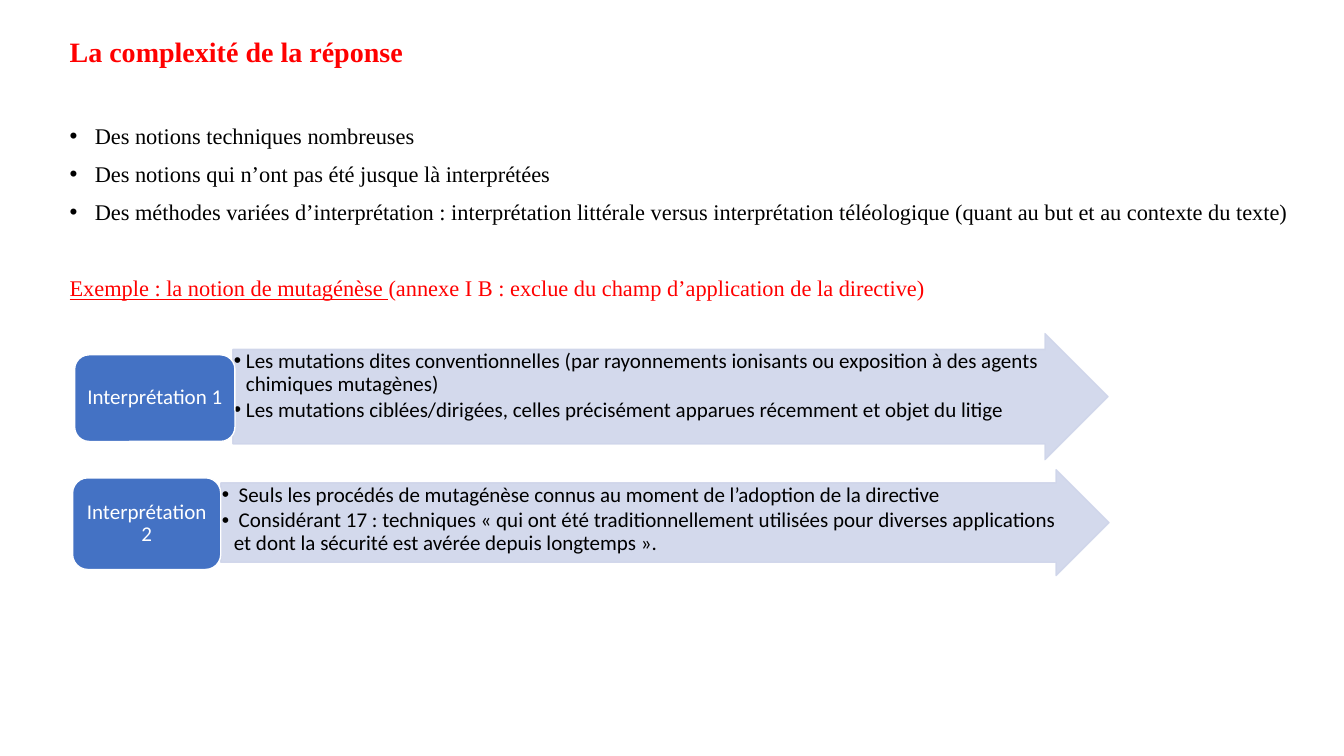
from dataclasses import dataclass

from lxml.etree import SubElement
from pptx import Presentation
from pptx.dml.color import RGBColor
from pptx.enum.shapes import MSO_SHAPE as Preset
from pptx.enum.text import MSO_ANCHOR as Anchor, MSO_AUTO_SIZE as AutoSize, PP_ALIGN as Align
from pptx.oxml.ns import qn
from pptx.util import Inches, Pt


@dataclass(frozen=True)
class Theme:
    red: RGBColor = RGBColor(0xFF, 0x00, 0x00)
    black: RGBColor = RGBColor(0x00, 0x00, 0x00)
    white: RGBColor = RGBColor(0xFF, 0xFF, 0xFF)
    blue: RGBColor = RGBColor(0x44, 0x72, 0xC4)
    pale_blue: RGBColor = RGBColor(0xCF, 0xD5, 0xEA)
    arrow_opacity: int = 90
    text_font: str = "Times New Roman"
    diagram_font: str = "Calibri"
    title_size: float = 20
    body_size: float = 16
    diagram_size: float = 15
    line_spacing: float = 0.9


@dataclass(frozen=True)
class Box:
    left: float
    top: float
    width: float
    height: float

    def lengths(self):
        return [Inches(value) for value in (self.left, self.top, self.width, self.height)]


@dataclass(frozen=True)
class Interpretation:
    label: str
    label_box: Box
    arrow_box: Box
    points: tuple[str, ...]


THEME = Theme()
TITLE = "La complexité de la réponse"
TITLE_BOX = Box(0.59, 0.33, 12.38, 0.45)
BODY_BOX = Box(0.59, 1.19, 12.38, 2)
NOTIONS = (
    "Des notions techniques nombreuses",
    "Des notions qui n’ont pas été jusque là interprétées",
    "Des méthodes variées d’interprétation : interprétation littérale versus "
    "interprétation téléologique (quant au but et au contexte du texte)",
)
EXAMPLE = "Exemple : la notion de mutagénèse "
EXAMPLE_DETAIL = "(annexe I B : exclue du champ d’application de la directive)"
INTERPRETATIONS = (
    Interpretation(
        "Interprétation 1",
        Box(0.74, 3.52, 1.59, 0.86),
        Box(2.31, 3.31, 8.68, 1.25),
        (
            "Les mutations dites conventionnelles (par rayonnements ionisants ou "
            "exposition à des agents chimiques mutagènes)",
            "Les mutations ciblées/dirigées, celles précisément apparues récemment "
            "et objet du litige",
        ),
    ),
    Interpretation(
        "Interprétation 2",
        Box(0.72, 4.74, 1.47, 0.91),
        Box(2.19, 4.66, 8.81, 1.05),
        (
            " Seuls les procédés de mutagénèse connus au moment de l’adoption de la directive",
            " Considérant 17 : techniques « qui ont été traditionnellement utilisées "
            "pour diverses applications et dont la sécurité est avérée depuis longtemps ».",
        ),
    ),
)


def place(shape, box: Box) -> None:
    shape.left, shape.top, shape.width, shape.height = box.lengths()


def set_frame(frame, anchor, horizontal: float, vertical: float) -> None:
    frame.word_wrap = True
    frame.auto_size = AutoSize.NONE
    frame.vertical_anchor = anchor
    frame.margin_left = frame.margin_right = Inches(horizontal)
    frame.margin_top = frame.margin_bottom = Inches(vertical)


def set_paragraph(paragraph, font_name: str, size: float, color: RGBColor, align=Align.LEFT,
                  before: float = 0, after: float = 0) -> None:
    paragraph.alignment = align
    paragraph.line_spacing = THEME.line_spacing
    paragraph.space_before = Pt(before)
    paragraph.space_after = Pt(after)
    paragraph.font.name = font_name
    paragraph.font.size = Pt(size)
    paragraph.font.color.rgb = color


def set_bullet(paragraph, indent: float) -> None:
    properties = paragraph._p.get_or_add_pPr()
    properties.set("marL", str(Inches(indent)))
    properties.set("indent", str(-Inches(indent)))
    SubElement(properties, qn("a:buFont"), typeface="Arial")
    SubElement(properties, qn("a:buChar"), char="•")


def remove_bullet(paragraph) -> None:
    properties = paragraph._p.get_or_add_pPr()
    properties.set("marL", "0")
    properties.set("indent", "0")
    SubElement(properties, qn("a:buNone"))


def add_paragraph(frame, index: int):
    return frame.paragraphs[0] if index == 0 else frame.add_paragraph()


def add_diagram_shape(slide, preset, box: Box, fill: RGBColor, line: RGBColor):
    shape = slide.shapes.add_shape(preset, *box.lengths())
    shape.shadow.inherit = False
    shape.fill.solid()
    shape.fill.fore_color.rgb = fill
    shape.line.color.rgb = line
    shape.line.width = Pt(1)
    return shape


def fill_title(title) -> None:
    place(title, TITLE_BOX)
    set_frame(title.text_frame, Anchor.TOP, 0.1, 0.05)
    paragraph = title.text_frame.paragraphs[0]
    paragraph.text = TITLE
    set_paragraph(paragraph, THEME.text_font, THEME.title_size, THEME.red)
    paragraph.font.bold = True


def fill_body(body) -> None:
    place(body, BODY_BOX)
    frame = body.text_frame
    set_frame(frame, Anchor.TOP, 0.1, 0.05)
    for index, notion in enumerate(NOTIONS):
        paragraph = add_paragraph(frame, index)
        paragraph.text = notion
        set_paragraph(paragraph, THEME.text_font, THEME.body_size, THEME.black,
                      before=10 if index else 0)
        set_bullet(paragraph, 0.25)
    example = frame.add_paragraph()
    set_paragraph(example, THEME.text_font, THEME.body_size, THEME.red, before=37)
    remove_bullet(example)
    heading = example.add_run()
    heading.text = EXAMPLE
    heading.font.underline = True
    example.add_run().text = EXAMPLE_DETAIL


def add_arrow(slide, interpretation: Interpretation) -> None:
    arrow = add_diagram_shape(slide, Preset.RIGHT_ARROW, interpretation.arrow_box,
                              THEME.pale_blue, THEME.pale_blue)
    arrow.adjustments[0] = 0.75
    arrow.adjustments[1] = 0.5
    for color in arrow._element.spPr.iter(qn("a:srgbClr")):
        SubElement(color, qn("a:alpha"), val=str(THEME.arrow_opacity * 1000))
    set_frame(arrow.text_frame, Anchor.TOP, 0.01, 0.01)
    for index, point in enumerate(interpretation.points):
        paragraph = add_paragraph(arrow.text_frame, index)
        paragraph.text = point
        set_paragraph(paragraph, THEME.diagram_font, THEME.diagram_size, THEME.black, after=2.25)
        set_bullet(paragraph, 0.12)


def add_label(slide, interpretation: Interpretation) -> None:
    label = add_diagram_shape(slide, Preset.ROUNDED_RECTANGLE, interpretation.label_box,
                              THEME.blue, THEME.white)
    set_frame(label.text_frame, Anchor.MIDDLE, 0.06, 0.03)
    paragraph = label.text_frame.paragraphs[0]
    paragraph.text = interpretation.label
    set_paragraph(paragraph, THEME.diagram_font, THEME.diagram_size, THEME.white, Align.CENTER)


def main() -> None:
    presentation = Presentation()
    presentation.slide_width = Inches(13.33)
    presentation.slide_height = Inches(7.5)
    slide = presentation.slides.add_slide(presentation.slide_layouts[1])
    fill_title(slide.shapes.title)
    fill_body(slide.placeholders[1])
    for interpretation in INTERPRETATIONS:
        add_arrow(slide, interpretation)
        add_label(slide, interpretation)
    presentation.save("out.pptx")


if __name__ == "__main__":
    main()
